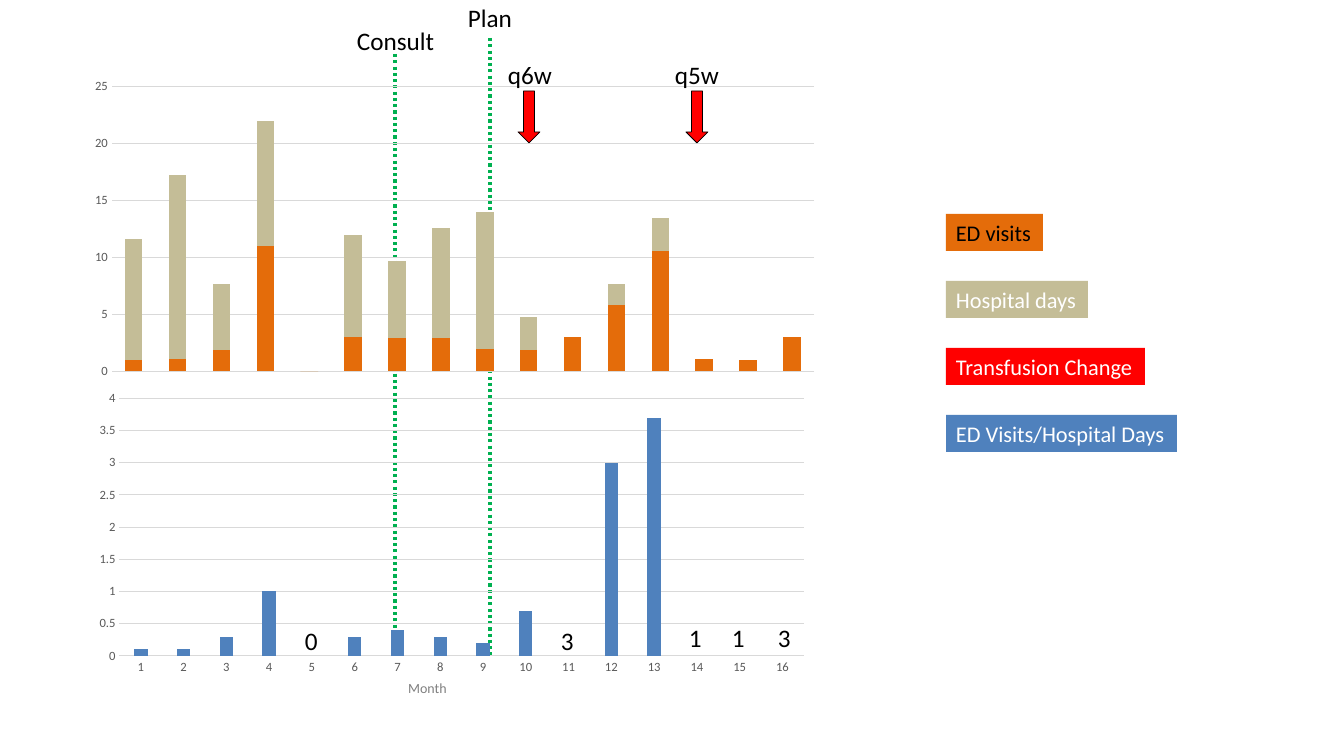
import pptx
import pptx.chart.data
import pptx.dml.color
import pptx.enum.chart
import pptx.enum.dml
import pptx.enum.shapes
import pptx.enum.text
import pptx.oxml
import pptx.oxml.ns
import pptx.util
from lxml import etree

THEME = {
    "font": "Calibri",
    "black": "000000", "white": "FFFFFF", "grid": "D9D9D9",
    "axis": "595959", "caption": "808080", "milestone": "00B050",
    "visits": "E46C0A", "days": "C4BD97", "change": "FF0000", "ratio": "4F81BD",
    "axis_size": 9, "chart_size": 10, "legend_size": 16, "label_size": 18,
}
PX = 914400 / 100.8
MSO = pptx.enum.shapes.MSO_SHAPE


def px(*lengths):
    return [pptx.util.Emu(round(length * PX)) for length in lengths]


def style_font(font, size, colour):
    font.name = THEME["font"]
    font.size = pptx.util.Pt(THEME[size])
    font.color.rgb = pptx.dml.color.RGBColor.from_string(THEME[colour])


deck = pptx.Presentation()
deck.slide_width, deck.slide_height = px(1344, 756)
page = deck.slides.add_slide(deck.slide_layouts[6])

# Dotted milestone lines
for x, top in ((395, 54), (490, 38)):
    line = page.shapes.add_connector(
        pptx.enum.shapes.MSO_CONNECTOR.STRAIGHT, *px(x, top, x, 655))
    line.line.color.rgb = pptx.dml.color.RGBColor.from_string(THEME["milestone"])
    line.line.width = pptx.util.Pt(2.25)
    line.line.dash_style = pptx.enum.dml.MSO_LINE.ROUND_DOT
    etree.SubElement(line.element.spPr, pptx.oxml.ns.qn("a:effectLst"))

# Charts: stacked visits and days above, their ratio below
visits = [1, 1.1, 1.9, 11, 0, 3, 2.9, 2.9, 2, 1.9, 3, 5.8, 10.6, 1.1, 1, 3]
days = [10.6, 16.1, 5.8, 11, 0, 9, 6.8, 9.7, 12, 2.9, 0, 1.9, 2.9, 0, 0, 0]
ratios = [0.1, 0.1, 0.3, 1, None, 0.3, 0.4, 0.3, 0.2, 0.7, None, 3, 3.7,
          None, None, None]
KIND = pptx.enum.chart.XL_CHART_TYPE
charts = []
for kind, place, series, gap, overlap, top_value, step in (
    (KIND.COLUMN_STACKED, (80, 73, 749, 312),
     (("Series 1", visits, "visits"), ("Series 2", days, "days")), 150, 100, 25, 5),
    (KIND.COLUMN_CLUSTERED, (71, 383, 758, 307),
     (("Series 1", ratios, "ratio"),), 219, -27, 4, 0.5),
):
    data = pptx.chart.data.CategoryChartData()
    data.categories = [str(month) for month in range(1, 17)]
    for name, values, colour in series:
        data.add_series(name, values)
    chart = page.shapes.add_chart(kind, *px(*place), data).chart
    charts.append(chart)
    chart.has_title = False
    chart.has_legend = False
    style_font(chart.font, "chart_size", "black")

    plot = chart.plots[0]
    plot.gap_width, plot.overlap = gap, overlap
    plot.vary_by_categories = False
    for bars, (name, values, colour) in zip(plot.series, series):
        bars.invert_if_negative = False
        bars.format.fill.solid()
        bars.format.fill.fore_color.rgb = pptx.dml.color.RGBColor.from_string(
            THEME[colour])

    value_axis, month_axis = chart.value_axis, chart.category_axis
    for axis in (value_axis, month_axis):
        axis.major_tick_mark = pptx.enum.chart.XL_TICK_MARK.NONE
        style_font(axis.tick_labels.font, "axis_size", "axis")
    value_axis.minimum_scale, value_axis.maximum_scale = 0, top_value
    value_axis.major_unit = step
    value_axis.format.line.fill.background()
    value_axis.has_major_gridlines = True
    for rule in (value_axis.major_gridlines.format.line, month_axis.format.line):
        rule.color.rgb = pptx.dml.color.RGBColor.from_string(THEME["grid"])
        rule.width = pptx.util.Pt(0.75)

visits_chart, ratio_chart = charts
visits_chart.category_axis.visible = False

# Fixed plot area of the ratio chart
plot_area = ratio_chart.element.find(".//" + pptx.oxml.ns.qn("c:plotArea"))
for layout in plot_area.findall(pptx.oxml.ns.qn("c:layout")):
    plot_area.remove(layout)
plot_area.insert(0, pptx.oxml.parse_xml(
    '<c:layout xmlns:c="http://schemas.openxmlformats.org/drawingml/2006/chart">'
    '<c:manualLayout><c:layoutTarget val="inner"/>'
    '<c:xMode val="edge"/><c:yMode val="edge"/>'
    '<c:x val="0.064"/><c:y val="0.05"/><c:w val="0.903"/><c:h val="0.839"/>'
    '</c:manualLayout></c:layout>'))

# Legend blocks
for row, (text, width, fill, colour) in enumerate((
    ("ED visits", 97, "visits", "black"),
    ("Hospital days", 142, "days", "white"),
    ("Transfusion Change", 199, "change", "white"),
    ("ED Visits/Hospital Days", 231, "ratio", "white"),
)):
    box = page.shapes.add_shape(MSO.RECTANGLE, *px(946, 214 + 67 * row, width, 37))
    box.shadow.inherit = False
    box.fill.solid()
    box.fill.fore_color.rgb = pptx.dml.color.RGBColor.from_string(THEME[fill])
    box.line.fill.background()
    frame = box.text_frame
    frame.word_wrap = False
    frame.auto_size = pptx.enum.text.MSO_AUTO_SIZE.SHAPE_TO_FIT_TEXT
    frame.vertical_anchor = pptx.enum.text.MSO_ANCHOR.TOP
    para = frame.paragraphs[0]
    para.text = text
    para.alignment = pptx.enum.text.PP_ALIGN.LEFT
    style_font(para.font, "legend_size", colour)

# Transfusion change arrows
for left in (518, 686):
    arrow = page.shapes.add_shape(MSO.DOWN_ARROW, *px(left, 91, 22, 52))
    arrow.shadow.inherit = False
    arrow.fill.solid()
    arrow.fill.fore_color.rgb = pptx.dml.color.RGBColor.from_string(THEME["change"])
    arrow.line.color.rgb = pptx.dml.color.RGBColor.from_string(THEME["black"])
    arrow.line.width = pptx.util.Pt(0.5)

# Milestone, interval and month labels
for text, left, top, width in (
    ("Consult", 347, 20, 99), ("Plan", 458, -3, 64),
    ("q6w", 498, 54, 64), ("q5w", 665, 54, 64),
    ("0", 295, 620, 33), ("3", 551, 620, 33),
    ("1", 679, 617, 33), ("1", 722, 617, 33), ("3", 768, 617, 33),
):
    box = page.shapes.add_textbox(*px(left, top, width, 40))
    box.text_frame.word_wrap = False
    box.text_frame.auto_size = pptx.enum.text.MSO_AUTO_SIZE.SHAPE_TO_FIT_TEXT
    para = box.text_frame.paragraphs[0]
    para.text = text
    style_font(para.font, "label_size", "black")

# Axis caption
caption = page.shapes.add_textbox(*px(379, 675, 97, 27))
caption.text_frame.word_wrap = True
caption.text_frame.auto_size = pptx.enum.text.MSO_AUTO_SIZE.SHAPE_TO_FIT_TEXT
para = caption.text_frame.paragraphs[0]
para.text = "Month"
para.alignment = pptx.enum.text.PP_ALIGN.CENTER
style_font(para.font, "chart_size", "caption")

deck.save("out.pptx")
